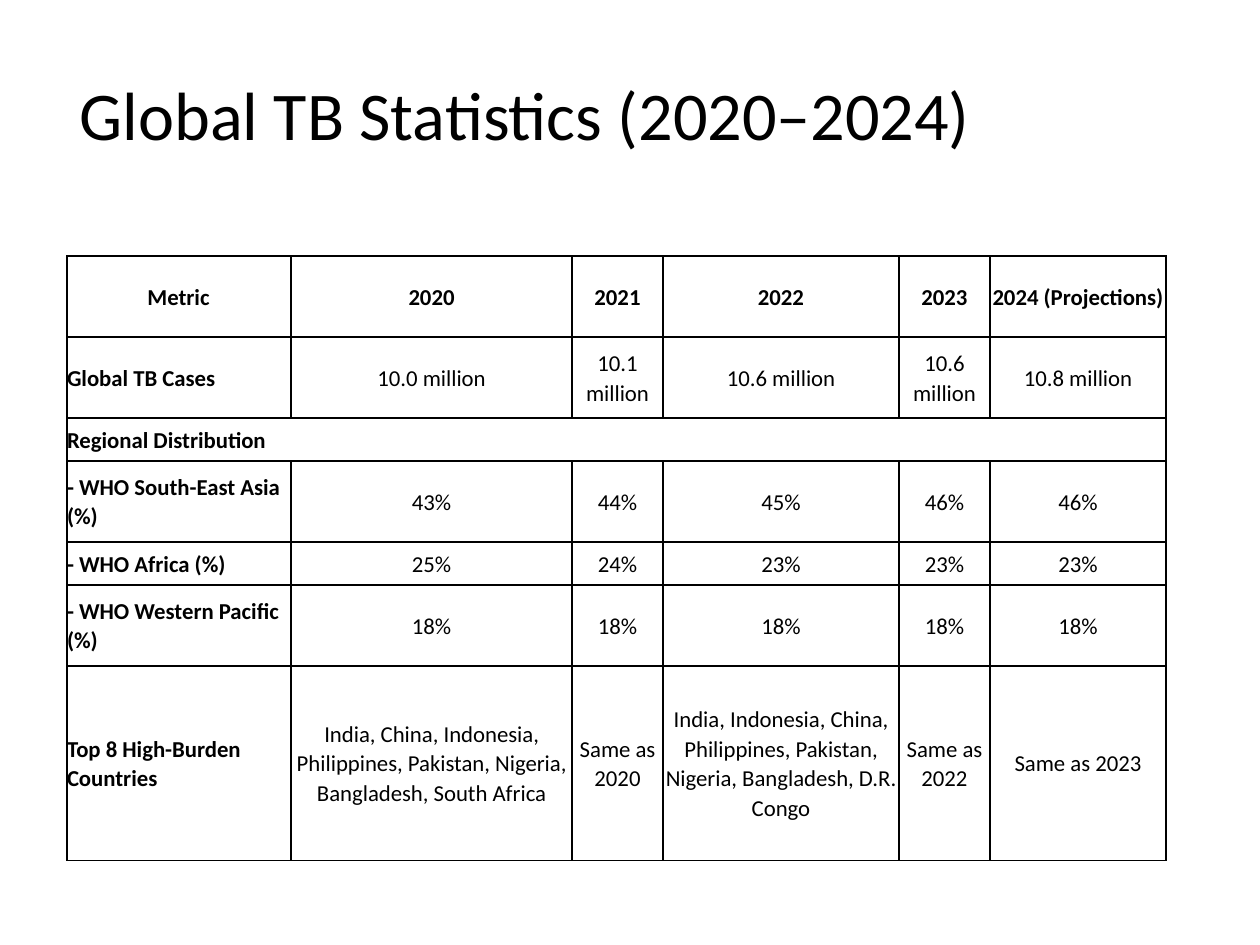
from lxml.etree import SubElement
from pptx import Presentation
from pptx.dml.color import RGBColor
from pptx.enum.text import MSO_ANCHOR as Anchor, MSO_AUTO_SIZE as AutoSize, PP_ALIGN as Align
from pptx.oxml.ns import qn
from pptx.util import Emu, Pt

EMU_PER_PX = 914400 / 126
FONT = "Calibri"
BLACK, WHITE = "000000", "FFFFFF"

COLUMN_WIDTHS = [224, 281, 91, 236, 91, 176]
ROW_HEIGHTS = [81, 81, 43, 81, 43, 81, 195]
STATISTICS = [
    ["Metric", "2020", "2021", "2022", "2023", "2024 (Projections)"],
    ["Global TB Cases", "10.0 million", "10.1 million", "10.6 million",
     "10.6 million", "10.8 million"],
    ["Regional Distribution"],
    ["- WHO South-East Asia (%)", "43%", "44%", "45%", "46%", "46%"],
    ["- WHO Africa (%)", "25%", "24%", "23%", "23%", "23%"],
    ["- WHO Western Pacific (%)"] + ["18%"] * 5,
    ["Top 8 High-Burden Countries",
     "India, China, Indonesia, Philippines, Pakistan, Nigeria, Bangladesh, South Africa",
     "Same as 2020",
     "India, Indonesia, China, Philippines, Pakistan, Nigeria, Bangladesh, D.R. Congo",
     "Same as 2022", "Same as 2023"],
]


def px(length):
    return Emu(round(length * EMU_PER_PX))


def color(hex_string):
    return RGBColor.from_string(hex_string)


def format_text(paragraph, size, bold, align, line_spacing):
    paragraph.alignment = align
    paragraph.line_spacing = line_spacing
    for run in paragraph.runs:
        run.font.name = FONT
        run.font.size = Pt(size)
        run.font.bold = bold
        run.font.color.rgb = color(BLACK)


def add_borders(cell):
    properties = cell._tc.get_or_add_tcPr()
    for position, side in enumerate(("lnL", "lnR", "lnT", "lnB")):
        border = SubElement(properties, qn(f"a:{side}"), w=str(Pt(1)))
        fill = SubElement(border, qn("a:solidFill"))
        SubElement(fill, qn("a:srgbClr"), val=BLACK)
        # Borders must come before the cell fill
        properties.insert(position, border)


def place_title(slide, left, top, width, height):
    title = slide.shapes.title
    title.left, title.top = px(left), px(top)
    title.width, title.height = px(width), px(height)
    frame = title.text_frame
    # The heading ends with a line break, which lifts it in its box
    frame.text = "Global TB Statistics (2020–2024)\v"
    frame.word_wrap = True
    frame.auto_size = AutoSize.NONE
    frame.vertical_anchor = Anchor.MIDDLE
    heading = frame.paragraphs[0]
    heading.font.size = Pt(39)
    format_text(heading, 39, False, Align.LEFT, 0.9)
    for line_break in heading._p.findall(qn("a:br")):
        SubElement(line_break, qn("a:rPr"), sz="3900")


def fill_cell(cell, text, is_header, is_metric):
    cell.text = text
    cell.vertical_anchor = Anchor.MIDDLE
    cell.margin_left = px(0 if is_metric else 1)
    cell.margin_right = cell.margin_top = cell.margin_bottom = px(1)
    align = Align.LEFT if is_metric and not is_header else Align.CENTER
    entry = cell.text_frame.paragraphs[0]
    entry.space_after = Pt(8)
    format_text(entry, 13, is_header or is_metric, align, 1.07)


def place_statistics(slide, left, top):
    frame = slide.shapes.add_table(
        len(ROW_HEIGHTS), len(COLUMN_WIDTHS), px(left), px(top),
        px(sum(COLUMN_WIDTHS)), px(sum(ROW_HEIGHTS)))
    statistics = frame.table
    statistics.first_row = statistics.horz_banding = False
    for column, width in zip(statistics.columns, COLUMN_WIDTHS):
        column.width = px(width)
    for row, height in zip(statistics.rows, ROW_HEIGHTS):
        row.height = px(height)

    for cell in statistics.iter_cells():
        cell.fill.solid()
        cell.fill.fore_color.rgb = color(WHITE)
        add_borders(cell)

    last_column = len(COLUMN_WIDTHS) - 1
    for r, entries in enumerate(STATISTICS):
        # A row with a single entry is a section heading across the table
        if len(entries) == 1:
            statistics.cell(r, 0).merge(statistics.cell(r, last_column))
        for c, text in enumerate(entries):
            fill_cell(statistics.cell(r, c), text, r == 0, c == 0)


def main():
    deck = Presentation()
    deck.slide_width, deck.slide_height = px(1260), px(945)
    slide = deck.slides.add_slide(deck.slide_layouts[5])
    place_title(slide, 67, 63, 971, 193)
    place_statistics(slide, 67, 256)
    deck.save("out.pptx")


if __name__ == "__main__":
    main()
